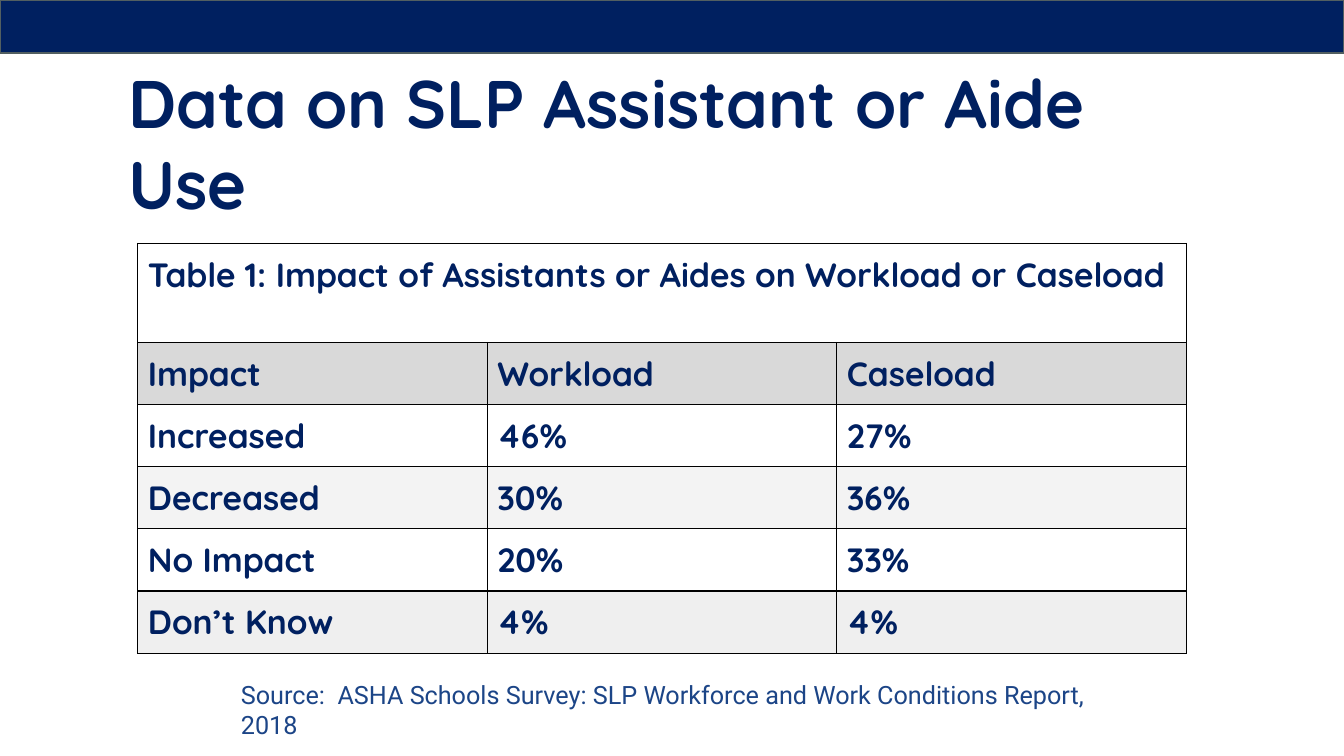
import pptx
import pptx.enum.shapes
import pptx.enum.text
import pptx.oxml.ns
import pptx.util
from lxml import etree

Pt = pptx.util.Pt
COLOURS = {
    "navy": "002060",
    "blue": "1C4587",
    "bar edge": "525F61",
    "border": "000000",
    "white": "FFFFFF",
    "header": "D9D9D9",
    "light": "F3F3F3",
    "last": "EFEFEF",
}
TABLE_TITLE = "Table 1: Impact of Assistants or Aides on Workload or Caseload"
IMPACT_ROWS = [
    (TABLE_TITLE, "", "", "white"),
    ("Impact", "Workload", "Caseload", "header"),
    ("Increased", "46%", "27%", "white"),
    ("Decreased", "30%", "36%", "light"),
    ("No Impact", "20%", "33%", "white"),
    ("Don’t Know", "4%", "4%", "last"),
]
TITLE_ROW_HEIGHT, ROW_HEIGHT = 70.6, 44.4
COLUMN_WIDTH = 249.7
INSET = 7.2


def colour(name):
    return pptx.dml.color.RGBColor.from_string(COLOURS[name])


def format_text(text_frame, size, font_name, colour_name, bold=False):
    for paragraph in text_frame.paragraphs:
        for run in paragraph.runs:
            run.font.size = Pt(size)
            run.font.name = font_name
            run.font.bold = bold
            run.font.color.rgb = colour(colour_name)


def set_margins(target, horizontal, vertical):
    target.margin_left = target.margin_right = Pt(horizontal)
    target.margin_top = target.margin_bottom = Pt(vertical)


def add_top_bar(slide, width, height):
    bar = slide.shapes.add_shape(
        pptx.enum.shapes.MSO_SHAPE.RECTANGLE, 0, 0, Pt(width), Pt(height))
    bar.shadow.inherit = False
    bar.fill.solid()
    bar.fill.fore_color.rgb = colour("navy")
    bar.line.color.rgb = colour("bar edge")
    bar.line.width = Pt(1)


def add_text(slide, text, left, top, width, height, vertical_inset, anchor):
    box = slide.shapes.add_textbox(Pt(left), Pt(top), Pt(width), Pt(height))
    text_frame = box.text_frame
    text_frame.word_wrap = True
    text_frame.vertical_anchor = anchor
    set_margins(text_frame, INSET, vertical_inset)
    text_frame.text = text
    return text_frame


def add_borders(cell):
    """Draw a thin line on all four sides; lines must precede the cell fill."""
    properties = cell._tc.get_or_add_tcPr()
    for position, side in enumerate(("lnL", "lnR", "lnT", "lnB")):
        line = etree.Element(pptx.oxml.ns.qn(f"a:{side}"), w=str(Pt(1)))
        fill = etree.SubElement(line, pptx.oxml.ns.qn("a:solidFill"))
        etree.SubElement(fill, pptx.oxml.ns.qn("a:srgbClr"), val=COLOURS["border"])
        properties.insert(position, line)


def add_impact_table(slide, left, top):
    row_count, column_count = len(IMPACT_ROWS), 3
    height = TITLE_ROW_HEIGHT + ROW_HEIGHT * (row_count - 1)
    table = slide.shapes.add_table(
        row_count, column_count, Pt(left), Pt(top),
        Pt(COLUMN_WIDTH * column_count), Pt(height)).table
    for column in table.columns:
        column.width = Pt(COLUMN_WIDTH)
    for row, (*texts, fill_name) in zip(table.rows, IMPACT_ROWS):
        row.height = Pt(ROW_HEIGHT)
        for cell, text in zip(row.cells, texts):
            cell.text = text
            set_margins(cell, INSET, INSET)
            cell.fill.solid()
            cell.fill.fore_color.rgb = colour(fill_name)
            add_borders(cell)
            format_text(cell.text_frame, 24, "Quicksand", "navy", bold=True)
    table.rows[0].height = Pt(TITLE_ROW_HEIGHT)
    table.cell(0, 0).merge(table.cell(0, column_count - 1))


def main():
    presentation = pptx.Presentation()
    presentation.slide_width = Pt(960)
    presentation.slide_height = Pt(540)
    slide = presentation.slides.add_slide(presentation.slide_layouts[6])
    anchors = pptx.enum.text.MSO_ANCHOR

    add_top_bar(slide, 960, 38)
    title = add_text(slide, "Data on SLP Assistant or Aide Use",
                     84.5, 38, 792, 127, 3.6, anchors.MIDDLE)
    format_text(title, 48, "Quicksand", "navy", bold=True)
    add_impact_table(slide, 98.4, 174)
    source = add_text(
        slide,
        "Source:  ASHA Schools Survey: SLP Workforce and Work Conditions Report, 2018",
        165, 478, 630, 19.5, INSET, anchors.TOP)
    format_text(source, 18, "Roboto", "blue")
    presentation.save("out.pptx")


if __name__ == "__main__":
    main()
